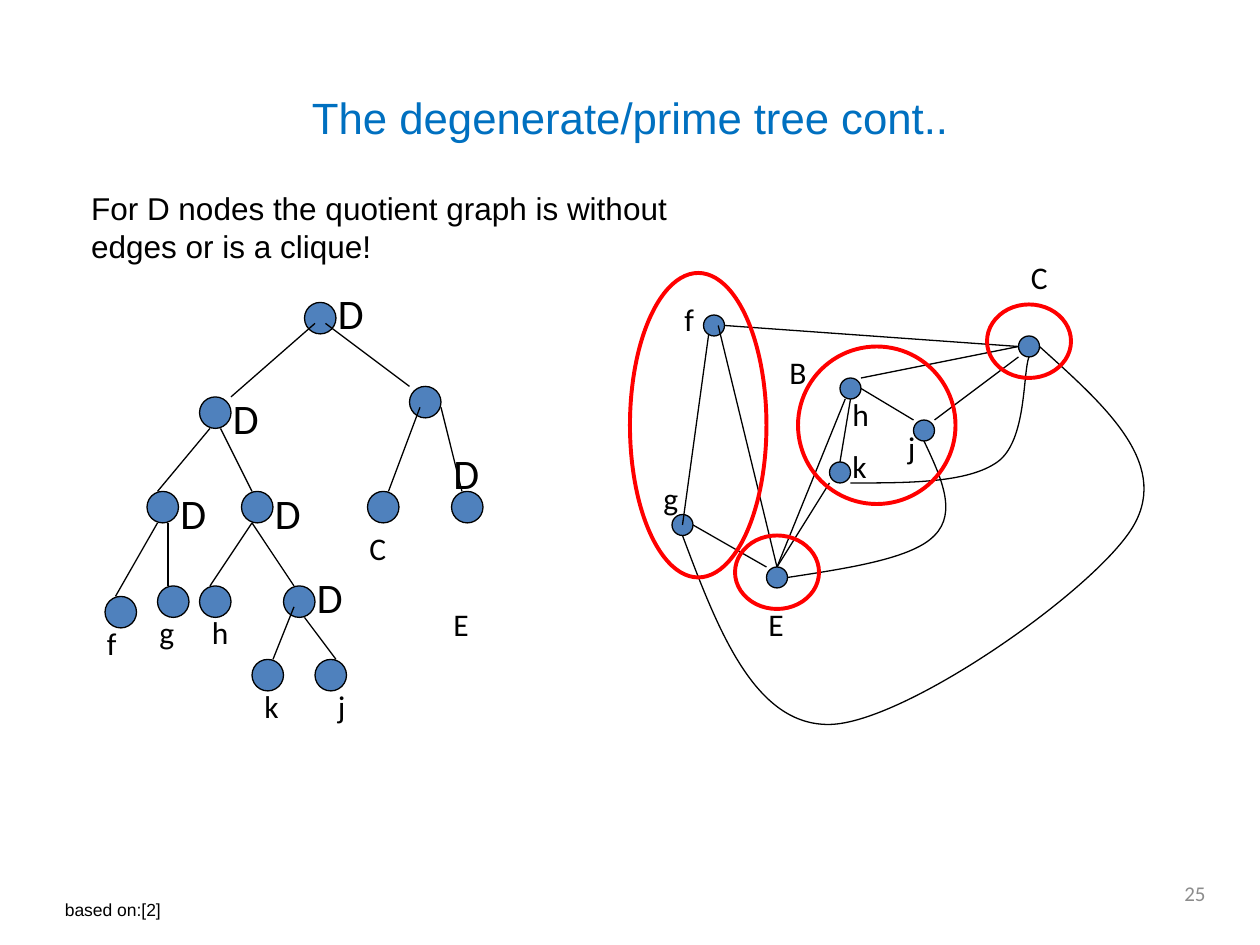
"""Build the slide on the degenerate/prime tree and its quotient graph."""
from dataclasses import dataclass
from typing import NamedTuple

from lxml import etree
from pptx import Presentation
from pptx.dml.color import RGBColor
from pptx.enum.shapes import MSO_CONNECTOR, MSO_SHAPE
from pptx.enum.text import MSO_ANCHOR, MSO_AUTO_SIZE, PP_ALIGN
from pptx.oxml.ns import qn
from pptx.util import Emu, Pt

OVAL = MSO_SHAPE.OVAL
STRAIGHT = MSO_CONNECTOR.STRAIGHT
TOP, MIDDLE = MSO_ANCHOR.TOP, MSO_ANCHOR.MIDDLE
LEFT, CENTER, RIGHT = PP_ALIGN.LEFT, PP_ALIGN.CENTER, PP_ALIGN.RIGHT
GROW, FIXED = MSO_AUTO_SIZE.SHAPE_TO_FIT_TEXT, MSO_AUTO_SIZE.NONE
EMU_PER_PX = 7620
TITLE_ONLY = 5


@dataclass(frozen=True)
class Theme:
    """Colours, fonts, type sizes and line widths of the slide."""
    ink: str = "000000"
    node: str = "4F81BD"
    ring: str = "FF0000"
    title: str = "0070C0"
    muted: str = "8C8C8C"
    heading_font: str = "Arial"
    label_font: str = "Calibri"
    title_size: int = 25
    degenerate_size: int = 24
    body_size: int = 18
    number_size: int = 12
    source_size: int = 10
    thin: float = 0.75
    thick: float = 2.25


class Box(NamedTuple):
    """A rectangle in px."""
    left: int
    top: int
    width: int
    height: int


class Edge(NamedTuple):
    """A straight line between two points in px."""
    x1: int
    y1: int
    x2: int
    y2: int


class Label(NamedTuple):
    """A letter with the corner of its text box in px."""
    text: str
    left: int
    top: int
    width: int = 90


THEME = Theme()
GRAPH_NODE, TREE_NODE = 20, 30
GRAPH_NODES = [(730, 540), (800, 360), (640, 490), (970, 320), (790, 440), (870, 400), (670, 300)]
TREE_NODES = [
    (290, 288), (190, 378), (390, 368), (430, 468), (350, 468), (230, 468), (140, 468),
    (100, 568), (150, 558), (190, 558), (270, 558), (240, 628), (300, 628),
]
GRAPH_EDGES = [
    Edge(800, 440, 810, 380), Edge(820, 370, 870, 400), Edge(890, 400, 970, 340),
    Edge(820, 360, 970, 330), Edge(790, 460, 740, 540), Edge(805, 380, 740, 540),
    Edge(660, 500, 730, 540), Edge(650, 500, 675, 318), Edge(740, 540, 684, 310),
    Edge(690, 310, 970, 330),
]
TREE_EDGES = [
    Edge(150, 468, 200, 408), Edge(240, 468, 210, 408), Edge(220, 378, 300, 308),
    Edge(310, 308, 390, 368), Edge(400, 388, 370, 468), Edge(420, 388, 440, 468),
    Edge(150, 498, 110, 568), Edge(160, 498, 160, 558), Edge(240, 498, 200, 558),
    Edge(240, 498, 280, 558), Edge(290, 588, 320, 628), Edge(280, 578, 260, 628),
]
CURVES = [
    [(810, 460), (866, 460), (922, 460), (950, 440), (978, 420), (974, 356), (980, 340)],
    [(880, 420), (896, 454), (912, 488), (890, 510), (869, 532), (809, 541), (750, 550)],
    [(990, 330), (1051, 385), (1114, 440), (1080, 500), (1046, 560), (862, 689), (790, 690),
     (719, 691), (684, 601), (650, 510)],
]
RINGS = [
    Box(760, 330, 150, 150), Box(600, 260, 130, 290),
    Box(700, 510, 80, 70), Box(940, 290, 80, 70),
]
LABELS = [
    Label("C", 340, 498), Label("E", 420, 570), Label("B", 740, 330), Label("C", 970, 240),
    Label("E", 720, 570), Label("f", 640, 280), Label("g", 620, 450), Label("h", 800, 370, 46),
    Label("j", 853, 402, 29), Label("k", 800, 420), Label("f", 90, 588), Label("g", 140, 578),
    Label("h", 190, 578), Label("j", 310, 648), Label("k", 240, 648),
]
DEGENERATE_MARKS = [(420, 420), (210, 368), (310, 268), (160, 458), (250, 458), (290, 538)]


def px(length: int) -> Emu:
    """Turn px into EMU."""
    return Emu(length * EMU_PER_PX)


def set_line(line, color: str = THEME.ink, width: float = THEME.thin) -> None:
    """Format an outline or connector line."""
    line.color.rgb = RGBColor.from_string(color)
    line.width = Pt(width)


def add_oval(slide, box: Box, *, fill: str | None = None, color: str = THEME.ink,
             width: float = THEME.thin) -> None:
    """Draw an ellipse, hollow unless a fill is given."""
    oval = slide.shapes.add_shape(OVAL, *map(px, box))
    oval.shadow.inherit = False
    if fill:
        oval.fill.solid()
        oval.fill.fore_color.rgb = RGBColor.from_string(fill)
    else:
        oval.fill.background()
    set_line(oval.line, color, width)


def add_nodes(slide, corners: list[tuple[int, int]], size: int) -> None:
    """Draw equal round nodes at the given corners."""
    for left, top in corners:
        add_oval(slide, Box(left, top, size, size), fill=THEME.node)


def add_edges(slide, edges: list[Edge]) -> None:
    """Draw straight edges without shadow."""
    for edge in edges:
        connector = slide.shapes.add_connector(STRAIGHT, *map(px, edge))
        set_line(connector.line)
        etree.SubElement(connector.element.spPr, qn("a:effectLst"))


def add_curve(slide, points: list[tuple[int, int]]) -> None:
    """Draw a cubic curve from a start point and triples of control and end points."""
    builder = slide.shapes.build_freeform(*points[0], scale=EMU_PER_PX)
    builder.add_line_segments(points[1:], close=False)
    curve = builder.convert_to_shape()
    segments = list(curve.element.iter(qn("a:lnTo")))
    for start in range(0, len(segments), 3):
        bezier = etree.Element(qn("a:cubicBezTo"))
        segments[start].addprevious(bezier)
        for segment in segments[start:start + 3]:
            bezier.append(segment[0])
            segment.getparent().remove(segment)
    curve.shadow.inherit = False
    curve.fill.background()
    set_line(curve.line)


def write(shape, text: str, *, size: int, font: str = THEME.label_font, color: str = THEME.ink,
          align: PP_ALIGN = LEFT, anchor: MSO_ANCHOR = TOP, fit: MSO_AUTO_SIZE = GROW) -> None:
    """Put formatted text into a shape."""
    frame = shape.text_frame
    frame.word_wrap = True
    frame.auto_size = fit
    frame.vertical_anchor = anchor
    para = frame.paragraphs[0]
    para.alignment = align
    span = para.add_run()
    span.text = text
    span.font.size = Pt(size)
    span.font.name = font
    span.font.color.rgb = RGBColor.from_string(color)


def add_text(slide, box: Box, text: str, **style) -> None:
    """Add a text box with formatted text."""
    write(slide.shapes.add_textbox(*map(px, box)), text, **style)


def set_title(slide, box: Box, text: str) -> None:
    """Move and fill the title placeholder."""
    title = slide.shapes.title
    title.left, title.top, title.width, title.height = map(px, box)
    write(title, text, size=THEME.title_size, font=THEME.heading_font, color=THEME.title,
          align=CENTER, anchor=MIDDLE, fit=FIXED)


def main() -> None:
    """Build and save the deck."""
    deck = Presentation()
    deck.slide_width, deck.slide_height = px(1200), px(900)
    page = deck.slides.add_slide(deck.slide_layouts[TITLE_ONLY])
    set_title(page, Box(60, 36, 1080, 150), "The degenerate/prime tree cont..")
    add_nodes(page, GRAPH_NODES, GRAPH_NODE)
    add_edges(page, GRAPH_EDGES)
    for points in CURVES:
        add_curve(page, points)
    for ring in RINGS:
        add_oval(page, ring, color=THEME.ring, width=THEME.thick)
    add_nodes(page, TREE_NODES, TREE_NODE)
    add_edges(page, TREE_EDGES)
    for label in LABELS:
        add_text(page, Box(label.left, label.top, label.width, 48), label.text,
                 size=THEME.body_size)
    for left, top in DEGENERATE_MARKS:
        add_text(page, Box(left, top, 80, 60), "D", size=THEME.degenerate_size)
    add_text(page, Box(75, 174, 600, 85),
             "For D nodes the quotient graph is without edges or is a clique!",
             size=THEME.body_size, font=THEME.heading_font)
    add_text(page, Box(880, 827, 280, 48), "25", size=THEME.number_size, color=THEME.muted,
             align=RIGHT, anchor=MIDDLE, fit=FIXED)
    add_text(page, Box(50, 850, 221, 32), "based on:[2]", size=THEME.source_size,
             font=THEME.heading_font)
    deck.save("out.pptx")


if __name__ == "__main__":
    main()
